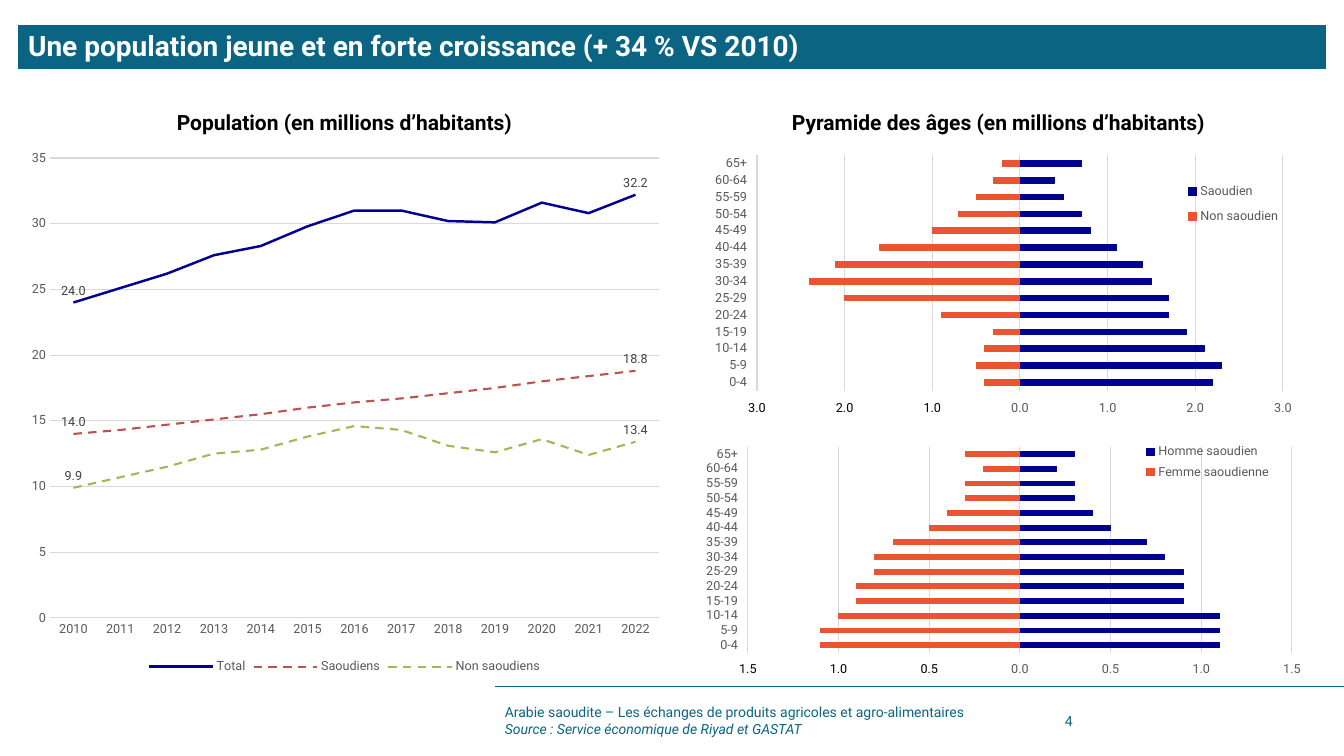
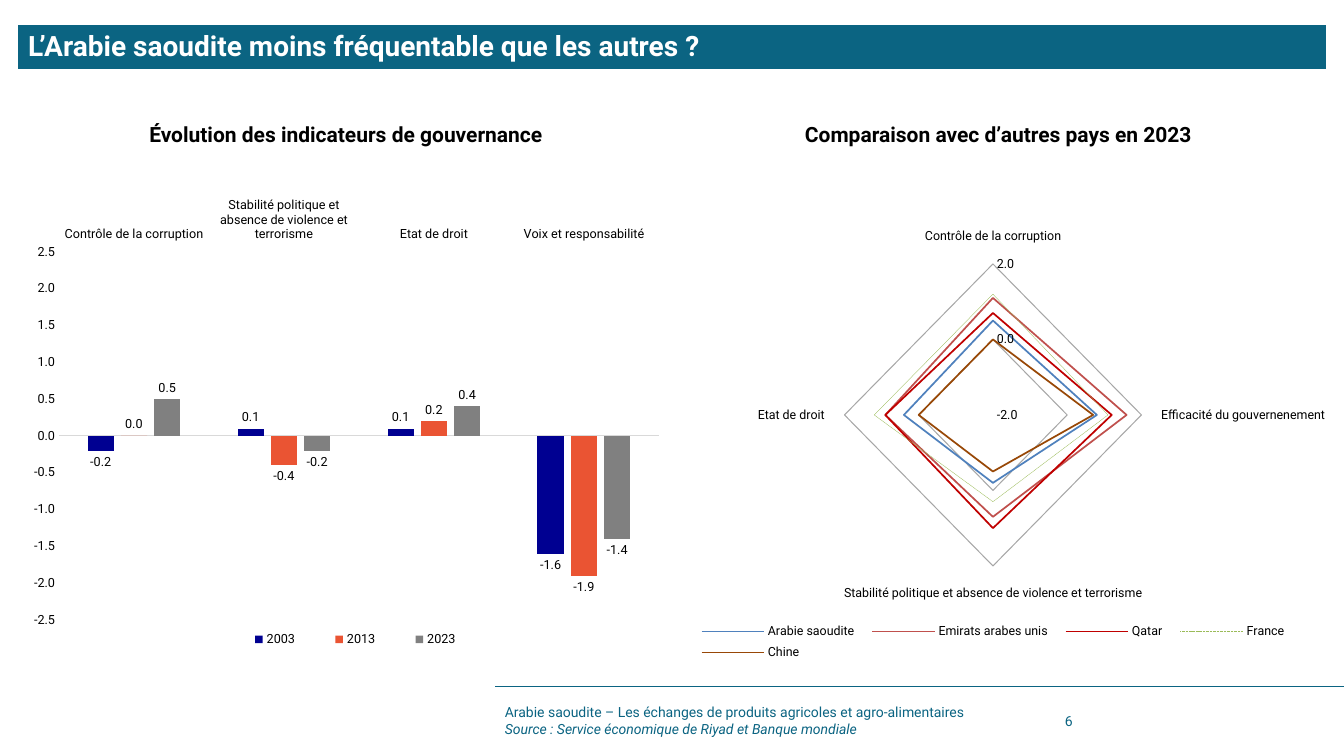
"""Build two slides of charts on the population and governance of Saudi Arabia."""
import pptx
import pptx.chart.data
import pptx.dml.color
import pptx.enum.chart
import pptx.enum.dml
import pptx.enum.shapes
import pptx.enum.text
import pptx.oxml
import pptx.oxml.ns
import pptx.util
from lxml import etree

FONT = "Roboto"
TEAL, WHITE, BLACK = "0B6482", "FFFFFF", "000000"
NAVY, ORANGE, GREY = "000091", "EA5433", "808080"
RED, GREEN = "C0504D", "9BBB59"
TEXT_GREY, LABEL_GREY, AXIS_GREY, RADAR_GREY = "595959", "404040", "D9D9D9", "A6A6A6"

TYPE = pptx.enum.chart.XL_CHART_TYPE
LEGEND = pptx.enum.chart.XL_LEGEND_POSITION
LABELS = pptx.enum.chart.XL_LABEL_POSITION
TICKS = pptx.enum.chart.XL_TICK_LABEL_POSITION
DASH = pptx.enum.dml.MSO_LINE.DASH
FINE_DASH = pptx.enum.dml.MSO_LINE.SQUARE_DOT
ALIGN = pptx.enum.text.PP_ALIGN
ANCHOR = pptx.enum.text.MSO_ANCHOR

SLIDE = (1344, 756)
TITLE_BOX = (18, 25, 1308, 44)
FOOTER_LINE = (1344, 686, 495, 686)
FOOTER_BOX = (495, 700, 547, 41)
NUMBER_BOX = (1055, 700, 100, 41)
FOOTER = "Arabie saoudite – Les échanges de produits agricoles et agro-alimentaires"

AGES = ["65+"] + [f"{a}-{a + 4}" for a in range(60, -1, -5)]

PYRAMID = dict(
    type=TYPE.BAR_STACKED, cats=AGES, color=TEXT_GREY, grid=AXIS_GREY,
    format="#,##0.0;[Black]#,##0.0", gap=200, overlap=100, outline=0.75,
    labels=TICKS.LOW, reverse=True, legend=LEGEND.RIGHT,
)

POPULATION = dict(
    type=TYPE.LINE, box=(18, 140, 653, 538), cats=[str(y) for y in range(2010, 2023)],
    color=TEXT_GREY, grid=AXIS_GREY, format="#,##0", scale=(0, 35, 5),
    plot=(50, 158, 609, 460), legend=LEGEND.BOTTOM, marked=(0, 12),
    series=[
        ("Total", NAVY, [24.0, 25.1, 26.2, 27.6, 28.3, 29.8, 31.0, 31.0, 30.2, 30.1,
                         31.6, 30.8, 32.2], 1.75, None),
        ("Saoudiens", RED, [14.0, 14.3, 14.7, 15.1, 15.5, 16.0, 16.4, 16.7, 17.1, 17.5,
                            18.0, 18.4, 18.8], 1.5, DASH),
        ("Non saoudiens", GREEN, [9.9, 10.7, 11.5, 12.5, 12.8, 13.8, 14.6, 14.3, 13.1,
                                  12.6, 13.6, 12.4, 13.4], 1.5, DASH),
    ],
)

BY_NATIONALITY = dict(
    PYRAMID, box=(672, 146, 653, 275), scale=(-3, 3, 1),
    plot=(757, 155, 526, 236), legend_box=(1178, 174, 111, 60),
    series=[
        ("Saoudien", NAVY,
         [0.7, 0.4, 0.5, 0.7, 0.8, 1.1, 1.4, 1.5, 1.7, 1.7, 1.9, 2.1, 2.3, 2.2]),
        ("Non saoudien", ORANGE,
         [-0.2, -0.3, -0.5, -0.7, -1, -1.6, -2.1, -2.4, -2, -0.9, -0.3, -0.4, -0.5, -0.4]),
    ],
)

BY_SEX = dict(
    PYRAMID, box=(672, 420, 653, 257), scale=(-1.5, 1.5, 0.5),
    plot=(748, 447, 544, 208), legend_box=(1136, 439, 144, 47),
    series=[
        ("Homme saoudien", NAVY,
         [0.3, 0.2, 0.3, 0.3, 0.4, 0.5, 0.7, 0.8, 0.9, 0.9, 0.9, 1.1, 1.1, 1.1]),
        ("Femme saoudienne", ORANGE,
         [-0.3, -0.2, -0.3, -0.3, -0.4, -0.5, -0.7, -0.8, -0.8, -0.9, -0.9, -1, -1.1, -1.1]),
    ],
)

GOVERNANCE = dict(
    type=TYPE.COLUMN_CLUSTERED, box=(20, 188, 652, 479),
    cats=["Contrôle de la corruption",
          "Stabilité politique et absence de violence et terrorisme",
          "Etat de droit", "Voix et responsabilité"],
    color=BLACK, format="0.0", scale=(-2.5, 2.5, 0.5), gap=219, overlap=-27,
    labels=TICKS.HIGH, values=True, plot=(59, 252, 600, 368),
    legend=LEGEND.BOTTOM, legend_box=(219, 625, 273, 29),
    series=[
        ("2003", NAVY, [-0.2, 0.1, 0.1, -1.6]),
        ("2013", ORANGE, [0, -0.4, 0.2, -1.9]),
        ("2023", GREY, [0.5, -0.2, 0.4, -1.4]),
    ],
)

COMPARISON = dict(
    type=TYPE.RADAR, box=(672, 188, 653, 479),
    cats=["Contrôle de la corruption", "Efficacité du gouvernenement",
          "Stabilité politique et absence de violence et terrorisme", "Etat de droit"],
    color=BLACK, grid=RADAR_GREY, format="0.0", scale=(-2, 2, 2),
    plot=(837, 264, 323, 302), legend=LEGEND.TOP, legend_box=(688, 618, 621, 48),
    series=[
        ("Arabie saoudite", "4F81BD", [0.5, 0.8, -0.2, 0.4], 1.25, None),
        ("Emirats arabes unis", RED, [1.1, 1.6, 0.7, 0.9], 1.25, None),
        ("Qatar", "C00000", [0.7, 1.2, 1.0, 0.9], 1.25, None),
        ("France", GREEN, [1.2, 1.1, 0.3, 1.2], 0.25, FINE_DASH),
        ("Chine", "984807", [0, 0.7, -0.5, 0], 1.25, None),
    ],
)

SLIDES = [
    dict(title="Une population jeune et en forte croissance (+ 34 % VS 2010)", number="4",
         source="Source : Service économique de Riyad et GASTAT",
         headings=[("Population (en millions d’habitants)", (18, 105, 653, 35)),
                   ("Pyramide des âges (en millions d’habitants)", (672, 105, 653, 35))],
         charts=[POPULATION, BY_NATIONALITY, BY_SEX]),
    dict(title="L’Arabie saoudite moins fréquentable que les autres ?", number="6",
         source="Source : Service économique de Riyad et Banque mondiale",
         headings=[("Évolution des indicateurs de gouvernance", (20, 117, 652, 35)),
                   ("Comparaison avec d’autres pays en 2023", (672, 117, 653, 35))],
         charts=[GOVERNANCE, COMPARISON]),
]


def emu(*lengths):
    return [round(n * 914400 / 100.8) for n in lengths]


def rgb(color):
    return pptx.dml.color.RGBColor.from_string(color)


def set_font(font, size, color, bold=False, italic=False):
    font.name, font.size = FONT, pptx.util.Pt(size)
    font.bold, font.italic = bold, italic
    font.color.rgb = rgb(color)


def set_line(line, color, width, dash=None):
    line.color.rgb = rgb(color)
    line.width = pptx.util.Pt(width)
    if dash:
        line.dash_style = dash


def add_text(s, box, lines, size, color, anchor=ANCHOR.MIDDLE, align=ALIGN.LEFT, bold=False):
    tf = s.shapes.add_textbox(*emu(*box)).text_frame
    tf.word_wrap, tf.vertical_anchor = True, anchor
    tf.text = "\n".join(lines)
    for i, p in enumerate(tf.paragraphs):
        p.alignment = align
        set_font(p.font, size, color, bold, italic=i > 0)


def add_title(s, text):
    sp = s.shapes.title
    sp.left, sp.top, sp.width, sp.height = emu(*TITLE_BOX)
    sp.fill.solid()
    sp.fill.fore_color.rgb = rgb(TEAL)
    tf = sp.text_frame
    tf.text = text
    tf.auto_size = pptx.enum.text.MSO_AUTO_SIZE.NONE
    tf.vertical_anchor = ANCHOR.MIDDLE
    p = tf.paragraphs[0]
    p.alignment, p.line_spacing = ALIGN.LEFT, 0.9
    set_font(p.font, 20, WHITE, bold=True)


def add_footer(s, source, number):
    line = s.shapes.add_connector(pptx.enum.shapes.MSO_CONNECTOR.STRAIGHT, *emu(*FOOTER_LINE))
    set_line(line.line, TEAL, 0.5)
    etree.SubElement(line._element.spPr, pptx.oxml.ns.qn("a:effectLst"))
    add_text(s, FOOTER_BOX, [FOOTER, source], 10, TEAL)
    add_text(s, NUMBER_BOX, [number], 10, TEAL)


def set_layout(parent, index, box, chart_box, inner=False):
    for old in parent.findall(pptx.oxml.ns.qn("c:layout")):
        parent.remove(old)
    left, top, width, height = chart_box
    shares = ((box[0] - left) / width, (box[1] - top) / height,
              box[2] / width, box[3] / height)
    target = '<c:layoutTarget val="inner"/>' if inner else ""
    modes = "".join(f'<c:{k}Mode val="edge"/>' for k in "xy")
    sizes = "".join(f'<c:{k} val="{v:.4f}"/>' for k, v in zip("xywh", shares))
    parent.insert(index, pptx.oxml.parse_xml(
        f'<c:layout {pptx.oxml.ns.nsdecls("c")}><c:manualLayout>'
        f"{target}{modes}{sizes}</c:manualLayout></c:layout>"))


def format_axes(chart, spec):
    cat, val = chart.category_axis, chart.value_axis
    for axis in (cat, val):
        axis.major_tick_mark = axis.minor_tick_mark = pptx.enum.chart.XL_TICK_MARK.NONE
        axis.has_major_gridlines = False
        set_font(axis.tick_labels.font, 9, spec["color"])
    set_line(cat.format.line, AXIS_GREY, 0.75)
    if "labels" in spec:
        cat.tick_label_position = spec["labels"]
    if spec.get("reverse"):
        cat.reverse_order = True
        val.tick_label_position = TICKS.HIGH
    val.format.line.fill.background()
    val.minimum_scale, val.maximum_scale, val.major_unit = spec["scale"]
    val.tick_labels.number_format = spec["format"]
    val.tick_labels.number_format_is_linked = False
    if "grid" in spec:
        val.has_major_gridlines = True
        set_line(val.major_gridlines.format.line, spec["grid"], 0.75)


def format_series(ser, spec, color, stroke):
    if stroke:
        set_line(ser.format.line, color, *stroke)
    else:
        ser.format.fill.solid()
        ser.format.fill.fore_color.rgb = rgb(color)
        ser.invert_if_negative = False
        if "outline" in spec:
            set_line(ser.format.line, color, spec["outline"])
    if spec["type"] == TYPE.LINE:
        ser.smooth = False
    for i in spec.get("marked", ()):
        label = ser.points[i].data_label
        set_font(label.font, 9, LABEL_GREY)
        label.position = LABELS.ABOVE
        ser.data_labels.show_value = False
    if spec.get("values"):
        labels = ser.data_labels
        labels.show_value = True
        labels.number_format, labels.number_format_is_linked = "0.0", False
        labels.position = LABELS.OUTSIDE_END
        set_font(labels.font, 9, BLACK)


def add_chart(s, spec):
    data = pptx.chart.data.CategoryChartData(number_format="0.0")
    data.categories = spec["cats"]
    for name, _, values, *_ in spec["series"]:
        data.add_series(name, values)
    chart = s.shapes.add_chart(spec["type"], *emu(*spec["box"]), data).chart
    chart.has_title = False
    set_font(chart.font, 9, spec["color"])
    plot = chart.plots[0]
    plot.vary_by_categories = False
    if "gap" in spec:
        plot.gap_width, plot.overlap = spec["gap"], spec["overlap"]
    format_axes(chart, spec)
    for ser, (_, color, _, *stroke) in zip(plot.series, spec["series"]):
        format_series(ser, spec, color, stroke)
    chart.has_legend = True
    legend = chart.legend
    legend.position, legend.include_in_layout = spec["legend"], False
    set_font(legend.font, 9, spec["color"])
    set_layout(chart._chartSpace.chart.plotArea, 0, spec["plot"], spec["box"], inner=True)
    if "legend_box" in spec:
        set_layout(legend._element, 1, spec["legend_box"], spec["box"])


def main():
    prs = pptx.Presentation()
    prs.slide_width, prs.slide_height = emu(*SLIDE)
    for content in SLIDES:
        s = prs.slides.add_slide(prs.slide_layouts[5])
        add_title(s, content["title"])
        add_footer(s, content["source"], content["number"])
        for spec in content["charts"]:
            add_chart(s, spec)
        for text, box in content["headings"]:
            add_text(s, box, [text], 15, BLACK, ANCHOR.TOP, ALIGN.CENTER, bold=True)
    prs.save("out.pptx")


if __name__ == "__main__":
    main()
